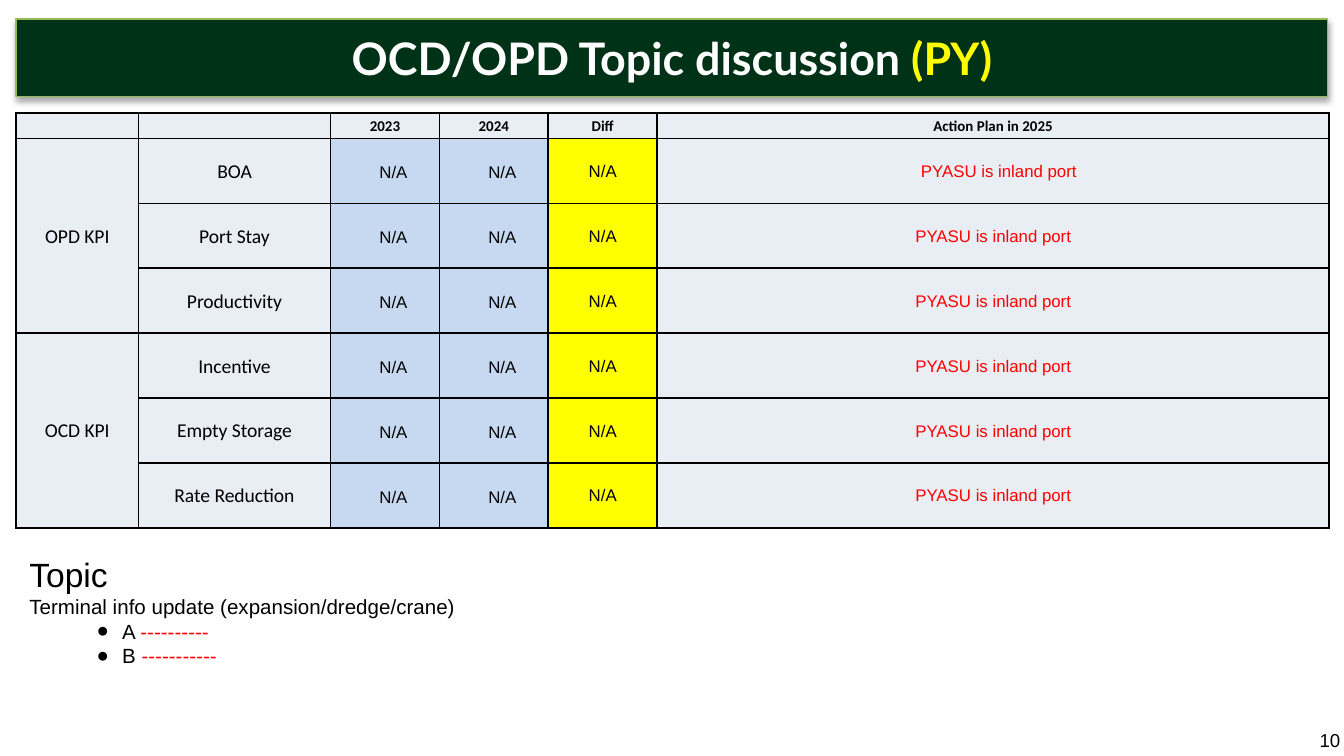
from dataclasses import dataclass, replace
from typing import Optional

from lxml.etree import SubElement
from pptx import Presentation
from pptx.dml.color import RGBColor
from pptx.enum.shapes import MSO_SHAPE
from pptx.enum.text import MSO_ANCHOR, PP_ALIGN
from pptx.oxml import parse_xml
from pptx.oxml.ns import nsdecls, qn
from pptx.util import Inches, Pt


@dataclass(frozen=True)
class Theme:
    banner: str = "003217"
    banner_line: str = "98B955"
    white: str = "FFFFFF"
    black: str = "000000"
    yellow: str = "FFFF00"
    red: str = "FF0000"
    pale: str = "E9EDF4"
    blue: str = "C6D9F1"
    title: float = 24
    topic: float = 18
    body: float = 11
    label: float = 10.5
    page: float = 10
    value: float = 9
    header: float = 8
    spacer: float = 6


T = Theme()


@dataclass(frozen=True)
class Run:
    text: str
    size: float
    font: str = "Arial"
    color: str = T.black
    bold: bool = False


@dataclass(frozen=True)
class Kpi:
    group: str
    topics: tuple[str, ...]


KPIS = (
    Kpi("OPD KPI", ("BOA", "Port Stay", "Productivity")),
    Kpi("OCD KPI", ("Incentive", "Empty Storage", "Rate Reduction")),
)
HEADERS = ("", "", "2023", "2024", "Diff", "Action Plan in 2025")
COL_WIDTHS = (0.91, 1.43, 0.81, 0.81, 0.81, 5)
HEADER_HEIGHT, BODY_HEIGHT = 0.19, 2.9
LEFT, WIDTH = 0.12, 9.76


def add_run(p, text: str, *, size: float, font: str, color: str, bold: bool) -> None:
    r = p.add_run()
    r.text = text
    r.font.size = Pt(size)
    r.font.name = font
    r.font.bold = bold
    r.font.color.rgb = RGBColor.from_string(color)


def write(p, *runs: Run, align: PP_ALIGN = PP_ALIGN.LEFT) -> None:
    p.alignment = align
    for run in runs:
        add_run(p, run.text, size=run.size, font=run.font, color=run.color, bold=run.bold)


def set_bullet(p, left: float, hanging: float) -> None:
    p.level = 1
    pPr = p._p.get_or_add_pPr()
    pPr.set("marL", str(Inches(left)))
    pPr.set("indent", str(-Inches(hanging)))
    SubElement(pPr, qn("a:buFont")).set("typeface", "Arial")
    SubElement(pPr, qn("a:buChar")).set("char", "●")


def set_borders(cell) -> None:
    tcPr = cell._tc.get_or_add_tcPr()
    for i, side in enumerate(("lnL", "lnR", "lnT", "lnB")):
        tcPr.insert(i, parse_xml(
            f'<a:{side} {nsdecls("a")} w="{Pt(1)}"><a:solidFill>'
            f'<a:srgbClr val="{T.black}"/></a:solidFill></a:{side}>'))


def fill_cell(cell, fill: str, *runs: Run) -> None:
    cell.fill.solid()
    cell.fill.fore_color.rgb = RGBColor.from_string(fill)
    cell.margin_left = cell.margin_right = cell.margin_top = Inches(0.01)
    cell.margin_bottom = 0
    cell.vertical_anchor = MSO_ANCHOR.MIDDLE
    set_borders(cell)
    p = cell.text_frame.paragraphs[0]
    write(p, *runs, align=PP_ALIGN.CENTER)
    if not runs:
        SubElement(p._p, qn("a:endParaRPr")).set("sz", str(T.header * 100))


def add_banner(s) -> None:
    sp = s.shapes.add_shape(MSO_SHAPE.RECTANGLE, Inches(LEFT), Inches(0.14),
                            Inches(WIDTH), Inches(0.58))
    sp.fill.solid()
    sp.fill.fore_color.rgb = RGBColor.from_string(T.banner)
    sp.line.color.rgb = RGBColor.from_string(T.banner_line)
    sp.line.width = Pt(0.75)
    sp._element.spPr.append(parse_xml(
        f'<a:effectLst {nsdecls("a")}><a:outerShdw blurRad="{Pt(3.1)}" '
        f'dist="{Pt(1.8)}" dir="5400000" rotWithShape="0">'
        f'<a:srgbClr val="{T.black}"><a:alpha val="35000"/></a:srgbClr>'
        '</a:outerShdw></a:effectLst>'))
    tf = sp.text_frame
    tf.margin_left = tf.margin_right = tf.margin_top = tf.margin_bottom = 0
    tf.vertical_anchor = MSO_ANCHOR.MIDDLE
    title = Run("OCD/OPD Topic discussion ", T.title, "Lato", T.white, True)
    write(tf.paragraphs[0], title, replace(title, text="(PY)", color=T.yellow),
          align=PP_ALIGN.CENTER)


def add_kpi_table(s) -> None:
    row_count = sum(len(kpi.topics) for kpi in KPIS)
    table = s.shapes.add_table(
        row_count + 1, len(COL_WIDTHS), Inches(LEFT), Inches(0.84), Inches(WIDTH),
        Inches(HEADER_HEIGHT + BODY_HEIGHT)).table
    table.first_row = table.horz_banding = False
    for col, width in zip(table.columns, COL_WIDTHS):
        col.width = Inches(width)
    for i, row in enumerate(table.rows):
        row.height = Inches(BODY_HEIGHT / row_count if i else HEADER_HEIGHT)
    for col, text in enumerate(HEADERS):
        runs = [Run(text, T.header, "Calibri", bold=True)] if text else []
        fill_cell(table.cell(0, col), T.pale, *runs)

    value = Run("N/A", T.value)
    spaced = replace(value, text="　N/A")
    plan = Run("PYASU is inland port", T.value, color=T.red)
    row = 1
    for kpi in KPIS:
        first = row
        for topic in kpi.topics:
            group = [Run(kpi.group, T.label, "Calibri")] if row == first else []
            fill_cell(table.cell(row, 0), T.pale, *group)
            fill_cell(table.cell(row, 1), T.pale, Run(topic, T.label, "Calibri"))
            fill_cell(table.cell(row, 2), T.blue, spaced)
            fill_cell(table.cell(row, 3), T.blue, spaced)
            fill_cell(table.cell(row, 4), T.yellow, value)
            lead = [Run("　", T.spacer)] if row == 1 else []
            fill_cell(table.cell(row, 5), T.pale, *lead, plan)
            row += 1
        table.cell(first, 0).merge(table.cell(row - 1, 0))


def add_text(s, left: float, top: float, width: float, height: float,
             paragraphs: list[list[Run]], *, bullets_from: Optional[int] = None,
             anchor: MSO_ANCHOR = MSO_ANCHOR.TOP) -> None:
    tf = s.shapes.add_textbox(Inches(left), Inches(top), Inches(width),
                              Inches(height)).text_frame
    tf.word_wrap = True
    tf.vertical_anchor = anchor
    for i, runs in enumerate(paragraphs):
        p = tf.add_paragraph() if i else tf.paragraphs[0]
        write(p, *runs)
        if bullets_from is not None and i >= bullets_from:
            set_bullet(p, 0.69, 0.19)


def main() -> None:
    prs = Presentation()
    prs.slide_width = Inches(10)
    prs.slide_height = prs.slide_width * 9 // 16
    s = prs.slides.add_slide(prs.slide_layouts[6])
    add_banner(s)
    add_kpi_table(s)
    add_text(s, LEFT, 4.07, WIDTH, 1.33, [
        [Run("Topic", T.topic)],
        [Run("Terminal info update (expansion/dredge/crane)", T.body)],
        [Run("A ", T.body), Run("----------", T.body, color=T.red)],
        [Run("B ", T.body), Run("-----------", T.body, color=T.red)],
    ], bullets_from=2)
    add_text(s, 9.72, 5.39, 0.64, 0.23, [[Run("10", T.page)]], anchor=MSO_ANCHOR.MIDDLE)
    prs.save("out.pptx")


if __name__ == "__main__":
    main()
